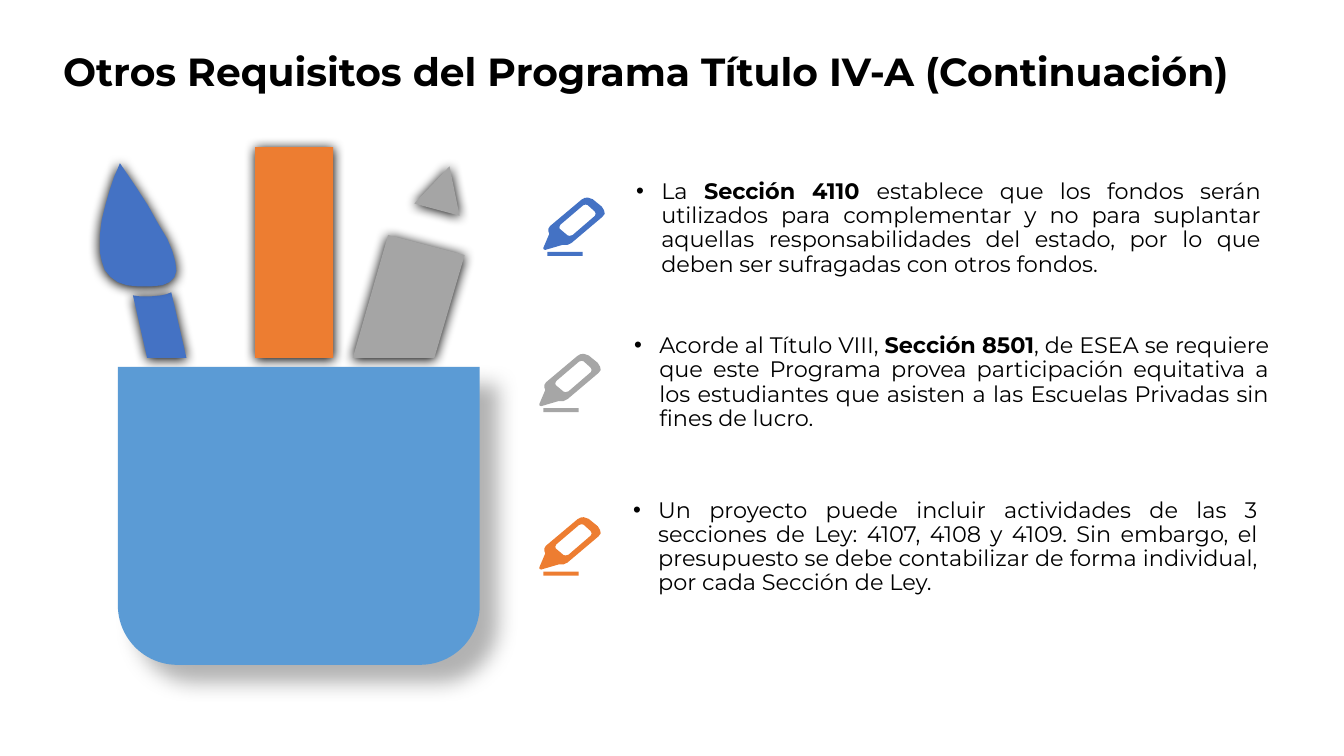
"""Builds the slide on further Title IV-A programme requirements."""
from dataclasses import dataclass

from lxml import etree
from pptx import Presentation
from pptx import util as u
from pptx.dml.color import RGBColor
from pptx.enum import shapes, text
from pptx.oxml.ns import qn


@dataclass(frozen=True)
class Theme:
    font: str = "Montserrat"
    title_size: int = 28
    body_size: int = 16
    ink: str = "000000"
    blue: str = "4472C4"
    orange: str = "ED7D31"
    gray: str = "A5A5A5"
    marker_gray: str = "A6A6A6"
    pot: str = "5B9BD5"


THEME = Theme()
TOOL_SHADOW = dict(alpha=100, blur=8.5, dist=1, angle=90)
POT_SHADOW = dict(alpha=30, blur=15, dist=18, angle=45)

BRUSH_HEAD = [
    (85.7, 116.6), (96.5, 132.5), (105.8, 146.9), (113, 159.8), (119.5, 170.6),
    (123.1, 179.3), (125.3, 187.2), (126, 193.7), (124.6, 198), (121, 201.6),
    (115.9, 203.8), (108.7, 204.5), (97.9, 204.5), (90.7, 203.8), (84.2, 201.6),
    (79.2, 198), (74.9, 193), (72.7, 186.5), (71.3, 180), (71.3, 168.5),
    (72.7, 157), (75.6, 145.4), (78.5, 135.4), (81.4, 126.7), (84.2, 120.2)]
BRUSH_HANDLE = [
    (122.4, 208.8), (133.2, 255.6), (105.1, 255.6), (95, 211),
    (100.1, 211.7), (108, 211.7), (115.2, 211), (118.8, 210.2)]
PENCIL_TIP = [(321.1, 118.8), (328.3, 154.1), (295.9, 145.4)]
PENCIL_BODY = [(277.2, 167.8), (331.9, 182.2), (310.3, 255.6), (252, 255.6)]

MARKER_WINDOW = [
    (30.2, 5), (28.4, 5.6), (12.2, 19.4), (11.5, 20.9), (11.7, 22.3), (17.3, 27),
    (18.7, 27.4), (20.9, 26.8), (36.9, 13), (37.4, 11.5), (36.7, 9.9), (31.7, 5.4)]
MARKER_EDGE = [
    (31.7, 0), (35.3, 1.2), (41.8, 6.5), (43.4, 9.2), (43.9, 11.6), (42.2, 13.8),
    (20.2, 32.4), (17.3, 33.8), (13.7, 33.8), (1.4, 37.4), (0.2, 37), (0, 36),
    (4.3, 25.9), (3.6, 24.1), (3.7, 22.2), (4.8, 20.4), (27.4, 1.4), (29.5, 0.3)]

REQUIREMENTS = [
    (THEME.blue, (388.1, 141.1), (442.8, 125.3, 465.1, 100.8),
     ["La ", "Sección 4110 ",
      "establece que los fondos serán utilizados para complementar y no para "
      "suplantar aquellas responsabilidades del estado, por lo que deben ser "
      "sufragadas con otros fondos."]),
    (THEME.marker_gray, (385.2, 252.7), (441.4, 235.4, 472.3, 77),
     ["Acorde al Título VIII, ", "Sección 8501",
      ", de ESEA se requiere que este Programa provea participación equitativa a "
      "los estudiantes que asisten a las Escuelas Privadas sin fines de lucro."]),
    (THEME.orange, (385.2, 369.4), (440.6, 352.8, 465.1, 77),
     ["Un proyecto puede incluir actividades de las 3 secciones de Ley: 4107, 4108 "
      "y 4109. Sin embargo, el presupuesto se debe contabilizar de forma "
      "individual, por cada Sección de Ley."]),
]


class SlideBuilder:
    def __init__(self, slide, theme):
        self.slide = slide
        self.theme = theme

    def paint(self, sp, color, shadow=None):
        sp.fill.solid()
        sp.fill.fore_color.rgb = RGBColor.from_string(color)
        sp.line.fill.background()
        sp.shadow.inherit = False
        if shadow:
            effects = sp._element.spPr.find(qn("a:effectLst"))
            outer = etree.SubElement(
                effects, qn("a:outerShdw"), blurRad=str(u.Pt(shadow["blur"])),
                dist=str(u.Pt(shadow["dist"])), dir=str(shadow["angle"] * 60000),
                algn="ctr", rotWithShape="0")
            shade = etree.SubElement(outer, qn("a:srgbClr"), val=self.theme.ink)
            etree.SubElement(shade, qn("a:alpha"), val=str(shadow["alpha"] * 1000))

    def preset(self, kind, box, color, shadow=None):
        sp = self.slide.shapes.add_shape(kind, *map(u.Pt, box))
        self.paint(sp, color, shadow)
        return sp

    def outline(self, contours, color, shadow=None, origin=(0, 0)):
        paths = [[(u.Pt(x), u.Pt(y)) for x, y in contour] for contour in contours]
        builder = self.slide.shapes.build_freeform(*paths[0][0])
        builder.add_line_segments(paths[0][1:])
        for path in paths[1:]:
            builder.move_to(*path[0])
            builder.add_line_segments(path[1:])
        self.paint(builder.convert_to_shape(*map(u.Pt, origin)), color, shadow)

    def marker(self, left, top, color):
        self.outline([MARKER_WINDOW, MARKER_EDGE], color, origin=(left, top))
        self.preset(shapes.MSO_SHAPE.RECTANGLE,
                    (left + 2.9, top + 38.9, 25.2, 2.9), color)

    def text_box(self, box, size, align, anchor):
        tf = self.slide.shapes.add_textbox(*map(u.Pt, box)).text_frame
        tf.word_wrap = True
        tf.vertical_anchor = anchor
        p = tf.paragraphs[0]
        p.alignment = align
        p.line_spacing = 0.9
        return p, size

    def format_run(self, r, size, bold):
        r.font.name = self.theme.font
        r.font.size = u.Pt(size)
        r.font.bold = bold
        r.font.color.rgb = RGBColor.from_string(self.theme.ink)

    def title(self, box, words):
        p, size = self.text_box(box, self.theme.title_size,
                                text.PP_ALIGN.CENTER, text.MSO_ANCHOR.MIDDLE)
        p.text = words
        self.format_run(p.runs[0], size, True)

    def bullet(self, box, parts):
        p, size = self.text_box(box, self.theme.body_size,
                                text.PP_ALIGN.JUSTIFY, text.MSO_ANCHOR.TOP)
        p.space_after = u.Pt(5)
        props = p._p.get_or_add_pPr()
        props.set("marL", str(u.Pt(22.5)))
        props.set("indent", str(u.Pt(-18)))
        tint = etree.SubElement(props, qn("a:buClr"))
        etree.SubElement(tint, qn("a:srgbClr"), val=self.theme.ink)
        etree.SubElement(props, qn("a:buFont"), typeface="Arial")
        etree.SubElement(props, qn("a:buChar"), char="•")
        for i, words in enumerate(parts):
            r = p.add_run()
            r.text = words
            self.format_run(r, size, i % 2 == 1)


def main():
    prs = Presentation()
    prs.slide_width, prs.slide_height = u.Pt(960), u.Pt(540)
    s = SlideBuilder(prs.slides.add_slide(prs.slide_layouts[6]), THEME)
    s.title((16.6, 13, 889.2, 79.2),
            "Otros Requisitos del Programa Título IV-A (Continuación)")
    for contour, color in [(PENCIL_TIP, THEME.gray), (PENCIL_BODY, THEME.gray),
                           (BRUSH_HANDLE, THEME.blue), (BRUSH_HEAD, THEME.blue)]:
        s.outline([contour], color, TOOL_SHADOW)
    s.preset(shapes.MSO_SHAPE.RECTANGLE, (182.2, 105.1, 55.8, 150.5),
             THEME.orange, TOOL_SHADOW)
    pot = s.preset(shapes.MSO_SHAPE.ROUND_2_SAME_RECTANGLE,
                   (84.2, 262.1, 258.5, 212.8), THEME.pot, POT_SHADOW)
    pot.adjustments[0], pot.adjustments[1] = 0, 0.2
    for color, marker_at, box, parts in REQUIREMENTS:
        s.bullet(box, parts)
        s.marker(*marker_at, color)
    prs.save("out.pptx")


if __name__ == "__main__":
    main()
